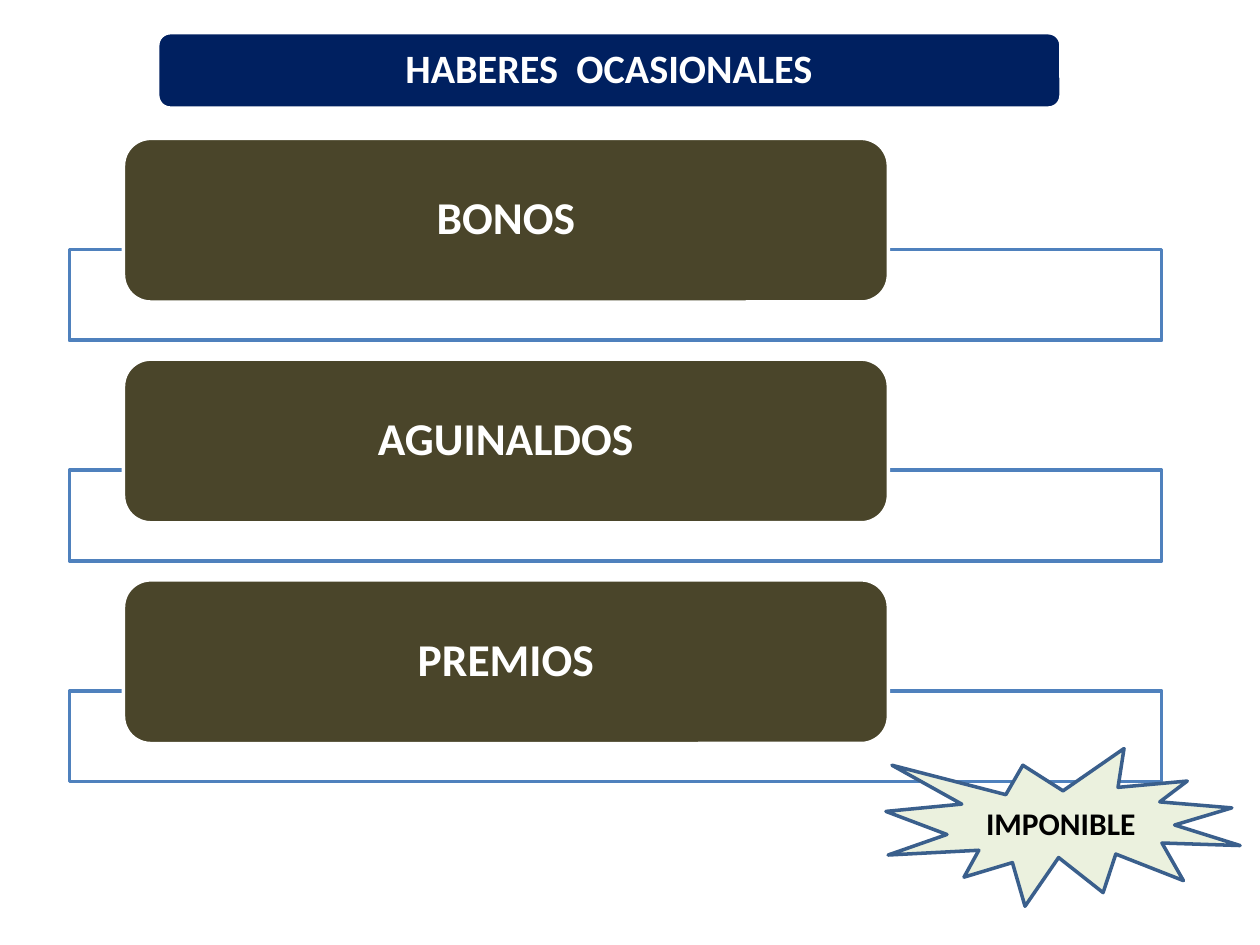
from pptx import Presentation
from pptx.dml.color import RGBColor as RGB
from pptx.enum.shapes import MSO_SHAPE as Kind
from pptx.enum.text import MSO_ANCHOR as Anchor, PP_ALIGN as Align
from pptx.util import Cm, Pt

WHITE = RGB(0xFF, 0xFF, 0xFF)
BLACK = RGB(0x00, 0x00, 0x00)
NAVY = RGB(0x00, 0x20, 0x60)
BLUE = RGB(0x4F, 0x81, 0xBD)
STEEL = RGB(0x3A, 0x5F, 0x8C)
OLIVE = RGB(0x4A, 0x45, 0x2A)
PALE = RGB(0xEB, 0xF1, 0xDE)


class Board:
    """Draws styled elements on the current slide."""

    font = "Calibri"
    width = Pt(2)

    def __init__(self, slide):
        self.slide = slide

    def shape(self, kind, box, fill, line):
        item = self.slide.shapes.add_shape(kind, *map(Cm, box))
        item.shadow.inherit = False
        item.fill.solid()
        item.fill.fore_color.rgb = fill
        item.line.color.rgb = line
        item.line.width = self.width
        return item

    def letter(self, item, text, size, color):
        frame = item.text_frame
        frame.word_wrap = True
        frame.vertical_anchor = Anchor.MIDDLE
        para = frame.paragraphs[0]
        para.text = text
        para.alignment = Align.CENTER
        font = para.font
        font.name, font.size, font.bold = self.font, Pt(size), True
        font.color.rgb = color
        return para

    def frame(self, box):
        self.shape(Kind.RECTANGLE, box, WHITE, BLUE)

    def label(self, box, text, size, fill):
        item = self.shape(Kind.ROUNDED_RECTANGLE, box, fill, WHITE)
        para = self.letter(item, text, size, WHITE)
        para.line_spacing = 0.9

    def burst(self, box, text):
        item = self.shape(Kind.EXPLOSION1, box, PALE, STEEL)
        self.letter(item, text, 18, BLACK)


def main():
    deck = Presentation()
    deck.slide_width, deck.slide_height = Cm(25.4), Cm(19.05)
    board = Board(deck.slides.add_slide(deck.slide_layouts[6]))

    board.label((3.18, 0.66, 18.21, 1.52), "HABERES  OCASIONALES", 23, NAVY)
    top, step = 2.79, 4.45
    for row, text in enumerate(("BONOS", "AGUINALDOS", "PREMIOS")):
        y = top + row * step
        board.frame((1.4, y + 2.24, 22.02, 1.83))
        board.label((2.49, y, 15.42, 3.3), text, 26, OLIVE)
    board.burst((17.86, 15.09, 7.14, 3.18), "IMPONIBLE")

    deck.save("out.pptx")


if __name__ == "__main__":
    main()
